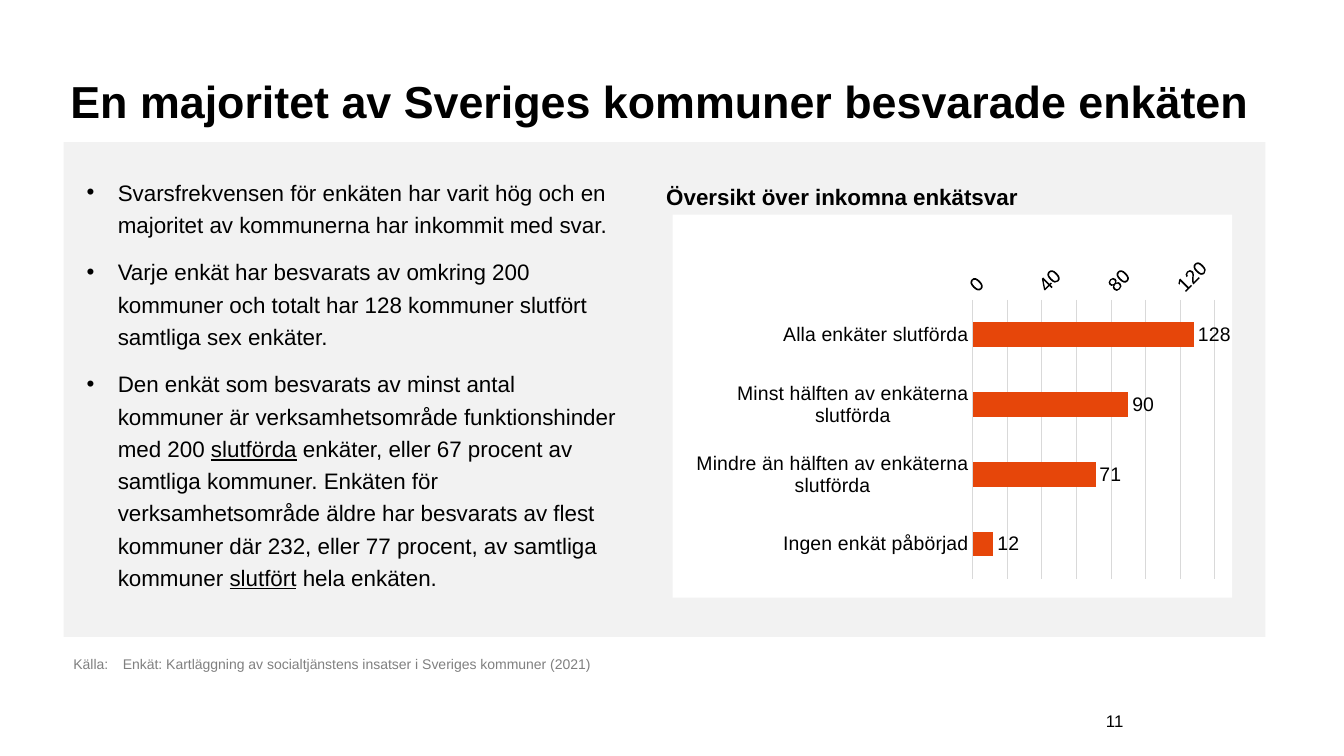
from lxml.etree import SubElement
from pptx import Presentation
from pptx.chart.data import CategoryChartData
from pptx.dml.color import RGBColor
from pptx.enum.chart import XL_CHART_TYPE, XL_LABEL_POSITION, XL_TICK_MARK
from pptx.enum.shapes import MSO_SHAPE
from pptx.enum.text import MSO_ANCHOR, PP_ALIGN
from pptx.oxml.ns import qn
from pptx.util import Inches, Pt

BLACK = RGBColor(0x00, 0x00, 0x00)
WHITE = RGBColor(0xFF, 0xFF, 0xFF)
PANEL_GREY = RGBColor(0xF2, 0xF2, 0xF2)
LINE_GREY = RGBColor(0xD9, 0xD9, 0xD9)
SOURCE_GREY = RGBColor(0x80, 0x80, 0x80)
ORANGE = RGBColor(0xE6, 0x46, 0x0A)
FONT = "Arial"

FINDINGS = [
    ["Svarsfrekvensen för enkäten har varit hög och en majoritet av kommunerna "
     "har inkommit med svar."],
    ["Varje enkät har besvarats av omkring 200 kommuner och totalt har 128 "
     "kommuner slutfört samtliga sex enkäter."],
    ["Den enkät som besvarats av minst antal kommuner är verksamhetsområde "
     "funktionshinder med 200 ",
     "slutförda",
     " enkäter, eller 67 procent av samtliga kommuner. Enkäten för "
     "verksamhetsområde äldre har besvarats av flest kommuner där 232, eller "
     "77 procent, av samtliga kommuner ",
     "slutfört",
     " hela enkäten."],
]
RESPONSES = {
    "Alla enkäter slutförda": 128,
    "Minst hälften av enkäterna slutförda": 90,
    "Mindre än hälften av enkäterna slutförda": 71,
    "Ingen enkät påbörjad": 12,
}


def set_font(font, size, color=BLACK, bold=False):
    font.name = FONT
    font.size = Pt(size)
    font.bold = bold
    font.color.rgb = color


def add_panel(page, left, top, width, height, color):
    panel = page.shapes.add_shape(
        MSO_SHAPE.RECTANGLE, Inches(left), Inches(top), Inches(width), Inches(height))
    panel.shadow.inherit = False
    panel.fill.solid()
    panel.fill.fore_color.rgb = color
    panel.line.fill.background()


def add_frame(page, left, top, width, height, anchor=MSO_ANCHOR.TOP):
    box = page.shapes.add_textbox(
        Inches(left), Inches(top), Inches(width), Inches(height))
    frame = box.text_frame
    frame.word_wrap = True
    frame.vertical_anchor = anchor
    return frame


def add_line(frame, text, size, color=BLACK, bold=False):
    para = frame.paragraphs[0]
    para.text = text
    set_font(para.font, size, color, bold)
    return para


def add_findings(page):
    frame = add_frame(page, 0.76, 1.67, 5.45, 4.26)
    for index, parts in enumerate(FINDINGS):
        para = frame.add_paragraph() if index else frame.paragraphs[0]
        para.line_spacing = 1.2
        para.space_after = Pt(11)
        properties = para._p.get_or_add_pPr()
        properties.set("marL", str(Inches(0.31)))
        properties.set("indent", str(Inches(-0.31)))
        SubElement(properties, qn("a:buFont"), typeface=FONT)
        SubElement(properties, qn("a:buChar"), char="•")
        set_font(para.font, 16)
        for position, text in enumerate(parts):
            span = para.add_run()
            span.text = text
            if position % 2:
                span.font.underline = True


def add_source(page):
    frame = add_frame(page, 0.63, 6.45, 12.17, 0.27)
    tabs = SubElement(frame.paragraphs[0]._p.get_or_add_pPr(), qn("a:tabLst"))
    SubElement(tabs, qn("a:tab"), pos=str(Inches(0.49)), algn="l")
    add_line(
        frame,
        "Källa:\tEnkät: Kartläggning av socialtjänstens insatser i Sveriges kommuner (2021)",
        10, SOURCE_GREY)


def style_axis(axis):
    axis.major_tick_mark = XL_TICK_MARK.NONE
    axis.minor_tick_mark = XL_TICK_MARK.NONE
    set_font(axis.tick_labels.font, 14)


def style_line(line):
    line.color.rgb = LINE_GREY
    line.width = Pt(0.75)


def add_response_chart(page):
    data = CategoryChartData()
    data.categories = list(RESPONSES)
    data.add_series("Series 1", list(RESPONSES.values()))
    chart = page.shapes.add_chart(
        XL_CHART_TYPE.BAR_CLUSTERED, Inches(6.8), Inches(2.48),
        Inches(5.41), Inches(3.33), data).chart
    chart.has_legend = False
    chart.has_title = False
    set_font(chart.font, 14)

    categories = chart.category_axis
    style_axis(categories)
    categories.reverse_order = True
    categories.has_major_gridlines = False
    style_line(categories.format.line)

    values = chart.value_axis
    style_axis(values)
    values.minimum_scale = 0
    values.maximum_scale = 140
    values.major_unit = 20
    values.format.line.fill.background()
    style_line(values.major_gridlines.format.line)
    values._element.find(qn("c:txPr")).find(qn("a:bodyPr")).set("rot", "-60000000")

    plot = chart.plots[0]
    plot.gap_width = 182
    plot.vary_by_categories = False
    series = plot.series[0]
    series.format.fill.solid()
    series.format.fill.fore_color.rgb = ORANGE
    labels = series.data_labels
    labels.show_value = True
    labels.position = XL_LABEL_POSITION.OUTSIDE_END
    set_font(labels.font, 14)


def main():
    deck = Presentation()
    deck.slide_width = Inches(13.33)
    deck.slide_height = Inches(7.5)
    page = deck.slides.add_slide(deck.slide_layouts[6])

    add_panel(page, 0.63, 1.41, 11.92, 4.91, PANEL_GREY)
    add_panel(page, 6.67, 2.13, 5.55, 3.8, WHITE)

    title = add_line(
        add_frame(page, 0.6, -0.02, 12.4, 1.35, MSO_ANCHOR.BOTTOM),
        "En majoritet av Sveriges kommuner besvarade enkäten", 32, bold=True)
    title.line_spacing = 0.95

    number = add_line(add_frame(page, 9.85, 6.95, 1.39, 0.4, MSO_ANCHOR.MIDDLE), "11", 12)
    number.alignment = PP_ALIGN.RIGHT

    add_response_chart(page)
    heading = add_line(
        add_frame(page, 6.51, 1.77, 6.23, 0.37),
        "Översikt över inkomna enkätsvar", 16, bold=True)
    heading.space_after = Pt(6)
    add_findings(page)
    add_source(page)
    deck.save("out.pptx")


if __name__ == "__main__":
    main()
